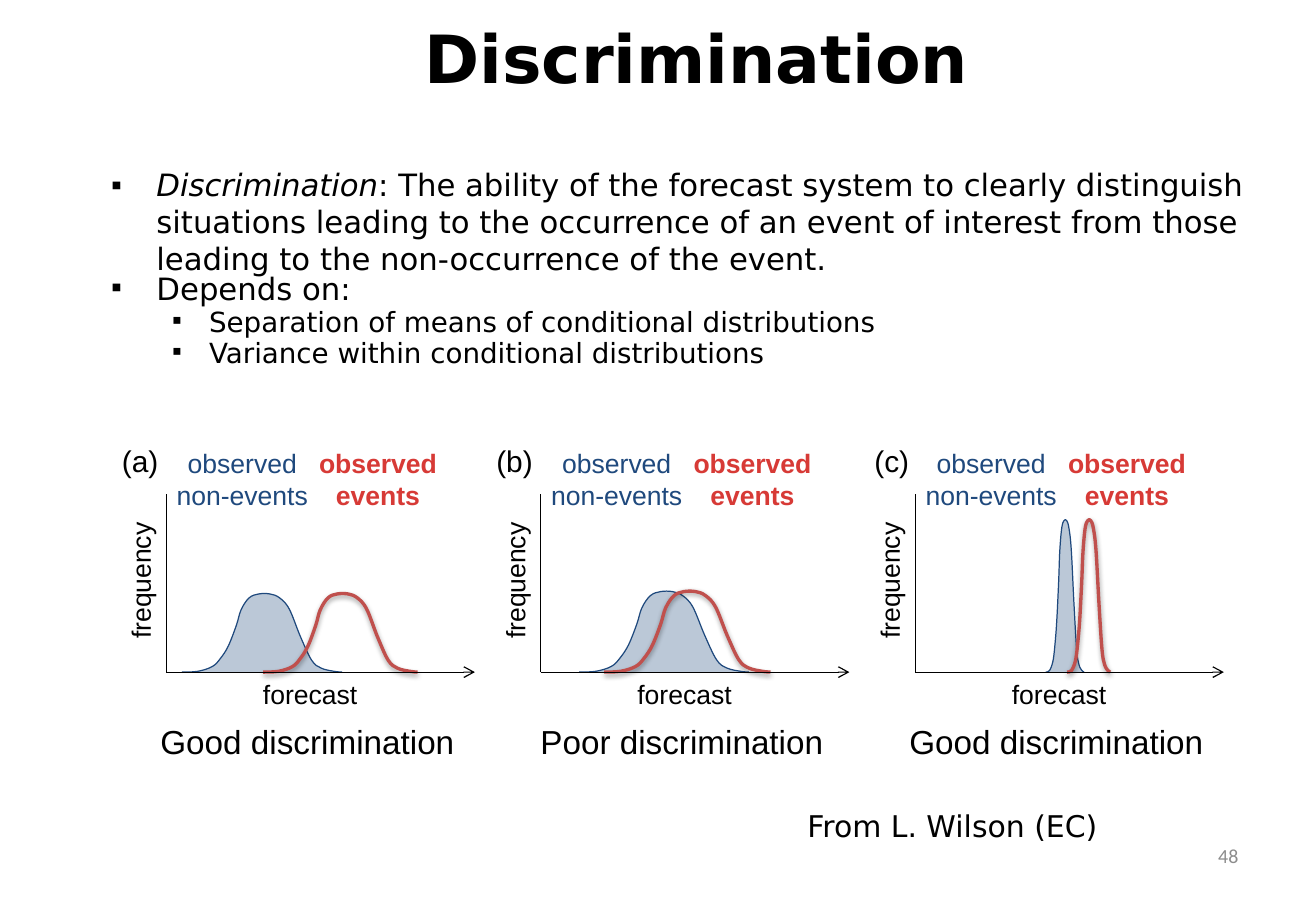
from lxml import etree
from pptx import Presentation
from pptx import util as u
from pptx.dml.color import RGBColor
from pptx.enum import shapes, text
from pptx.oxml import parse_xml
from pptx.oxml.ns import qn

PX = 9144  # 100 px to the inch
BLACK, BLUE, RED, LABEL_RED, GREY = "000000", "1F497D", "C0504D", "D73A36", "8C8C8C"
SANS, ARIAL, CALIBRI = "DejaVu Sans", "Arial", "Calibri"
PANEL_LEFT, PANEL_TOP, PANEL_STEP = 139, 365, 313
BASE = 197  # forecast axis, below the top of a panel

# Shared bell profile: (fraction of width, fraction of height)
BELL = [(0, 0), (0.1, 0.01), (0.19, 0.07), (0.24, 0.17), (0.29, 0.33), (0.34, 0.59),
        (0.37, 0.79), (0.42, 0.94), (0.48, 0.99), (0.55, 0.99), (0.61, 0.94),
        (0.67, 0.8), (0.74, 0.45), (0.81, 0.15), (0.87, 0.05), (0.95, 0.01), (1, 0)]

# letter and its shift from the axis, caption,
# (left, width, height) of the non-event and event curves
PANELS = [
    ("(a)", -47, "Good discrimination", (13, 134, 66), (81, 129, 66)),
    ("(b)", -47, "Poor discrimination", (32, 142, 68), (53, 139, 68)),
    ("(c)", -44, "Good discrimination", (109, 32, 128), (127, 36, 128)),
]


def px(value):
    return u.Emu(round(value * PX))


def color(value):
    return RGBColor.from_string(value)


def set_font(paragraph, name, size, fill, bold=False):
    font = paragraph.font
    font.name, font.size, font.bold = name, u.Pt(size), bold
    font.color.rgb = color(fill)


def add_text(parent, box, lines, name, size, fill=BLACK, bold=False,
             align=text.PP_ALIGN.LEFT, anchor=text.MSO_ANCHOR.TOP, wrap=False):
    shape = parent.add_textbox(*map(px, box))
    frame = shape.text_frame
    frame.word_wrap = wrap
    frame.vertical_anchor = anchor
    frame.text = lines
    for paragraph in frame.paragraphs:
        paragraph.alignment = align
        set_font(paragraph, name, size, fill, bold)
    return shape


def add_bullet(paragraph, margin, hang):
    properties = paragraph._p.get_or_add_pPr()
    properties.set("marL", str(px(margin)))
    properties.set("indent", str(-px(hang)))
    bullet_font = etree.Element(qn("a:buFont"), typeface=ARIAL)
    bullet = etree.Element(qn("a:buChar"), char="▪")
    properties.find(qn("a:defRPr")).addprevious(bullet_font)
    bullet_font.addnext(bullet)


def add_body(slide, box):
    frame = add_text(slide.shapes, box, "", SANS, 18.5, wrap=True).text_frame
    definition = frame.paragraphs[0]
    definition.add_run().text = "Discrimination"
    definition.runs[0].font.italic = True
    definition.add_run().text = (
        ": The ability of the forecast system to clearly distinguish situations leading to "
        "the occurrence of an event of interest from those leading to the non-occurrence "
        "of the event.")
    add_bullet(definition, 38, 38)
    for words, level, size, before in [
            ("Depends on:", 0, 18.5, 3.8),
            ("Separation of means of conditional distributions", 1, 16.7, 6.8),
            ("Variance within conditional distributions", 1, 16.7, 6.5)]:
        paragraph = frame.add_paragraph()
        paragraph.text = words
        paragraph.level = level
        paragraph.line_spacing = 0.6
        paragraph.space_before = u.Pt(before)
        set_font(paragraph, SANS, size, BLACK)
        add_bullet(paragraph, *((82, 31) if level else (38, 38)))


def add_axis(parent, start, end, arrow=False):
    axis = parent.add_connector(shapes.MSO_CONNECTOR.STRAIGHT, *map(px, start + end))
    axis.line.color.rgb = color(BLACK)
    axis.line.width = u.Pt(0.75)
    if arrow:
        etree.SubElement(axis.line._get_or_add_ln(), qn("a:tailEnd")).set("type", "arrow")
    etree.SubElement(axis._element.spPr, qn("a:effectLst"))


def curve_segments(shape):
    """Turn the straight segments of a freeform into smooth Bézier curves."""
    outline = next(shape._element.iter(qn("a:path")))
    points = [(int(point.get("x")), int(point.get("y")))
              for point in outline.iter(qn("a:pt"))]
    padded = [points[0], *points, points[-1]]
    segments = outline.findall(qn("a:lnTo"))
    for segment, a, b, c, d in zip(segments, padded, padded[1:], padded[2:], padded[3:]):
        curve = etree.Element(qn("a:cubicBezTo"))
        first = [q + (r - p) / 6 for p, q, r in zip(a, b, c)]
        second = [r - (s - q) / 6 for q, r, s in zip(b, c, d)]
        for x, y in (first, second, c):
            etree.SubElement(curve, qn("a:pt"), x=str(round(x)), y=str(round(y)))
        outline.replace(segment, curve)


def add_bell(parent, left, base, width, height, line, weight):
    points = [(px(left + x * width), px(base - y * height)) for x, y in BELL]
    builder = parent.build_freeform(*points[0])
    builder.add_line_segments(points[1:], close=False)
    bell = builder.convert_to_shape()
    curve_segments(bell)
    bell.shadow.inherit = False
    bell.fill.background()
    bell.line.color.rgb = color(line)
    bell.line.width = u.Pt(weight)
    return bell


def fill_translucent(shape, fill, percent):
    shape.fill.solid()
    shape.fill.fore_color.rgb = color(fill)
    tint = shape._element.spPr.find(qn("a:solidFill"))[0]
    etree.SubElement(tint, qn("a:alpha")).set("val", str(percent * 1000))


def add_drop_shadow(shape):
    shape._element.spPr.find(qn("a:effectLst")).append(parse_xml(
        '<a:outerShdw xmlns:a="http://schemas.openxmlformats.org/drawingml/2006/main" '
        'blurRad="40000" dist="20000" dir="5400000" rotWithShape="0">'
        '<a:srgbClr val="000000"><a:alpha val="38000"/></a:srgbClr></a:outerShdw>'))


def add_panel(slide, left, top, letter, letter_shift, caption, non_events, events):
    """One frequency plot; left is where its vertical axis stands."""
    parent = slide.shapes.add_group_shape().shapes
    base = top + BASE
    center = text.PP_ALIGN.CENTER
    add_text(parent, (left + 71, base, 100, 37), "forecast", ARIAL, 16)
    add_axis(parent, (left, base), (left, top + 48))

    offset, width, height = non_events
    bell = add_bell(parent, left + offset, base, width, height, BLUE, 0.75)
    fill_translucent(bell, BLUE, 30)
    offset, width, height = events
    add_drop_shadow(add_bell(parent, left + offset, base, width, height, RED, 2))

    add_axis(parent, (left, base), (left + 258, base), arrow=True)
    frequency = add_text(parent, (left - 81, top + 101, 119, 37), "frequency", ARIAL, 16)
    frequency.rotation = 270
    add_text(parent, (left - 2, top + 4, 131, 64), "observed\nnon-events", ARIAL, 16,
             BLUE, align=center)
    add_text(parent, (left + 117, top + 4, 120, 64), "observed\nevents", ARIAL, 16,
             LABEL_RED, bold=True, align=center)
    add_text(slide.shapes, (left + letter_shift, top, 51, 40), letter, ARIAL, 18)
    add_text(slide.shapes, (left - 16, top + 233, 268, 44), caption, ARIAL, 20,
             align=center)


def main():
    presentation = Presentation()
    presentation.slide_width, presentation.slide_height = px(1100), px(750)
    slide = presentation.slides.add_slide(presentation.slide_layouts[6])
    middle = text.MSO_ANCHOR.MIDDLE
    add_text(slide.shapes, (117, 0, 930, 95), "Discrimination", SANS, 40, bold=True,
             align=text.PP_ALIGN.CENTER, anchor=middle, wrap=True)
    add_body(slide, (83, 134, 980, 175))
    add_text(slide.shapes, (788, 695, 257, 40), "48", CALIBRI, 12, GREY,
             align=text.PP_ALIGN.RIGHT, anchor=middle, wrap=True)
    for index, panel in enumerate(PANELS):
        add_panel(slide, PANEL_LEFT + index * PANEL_STEP, PANEL_TOP, *panel)
    add_text(slide.shapes, (665, 670, 275, 40), "From L. Wilson (EC)", SANS, 18)
    presentation.save("out.pptx")


if __name__ == "__main__":
    main()
